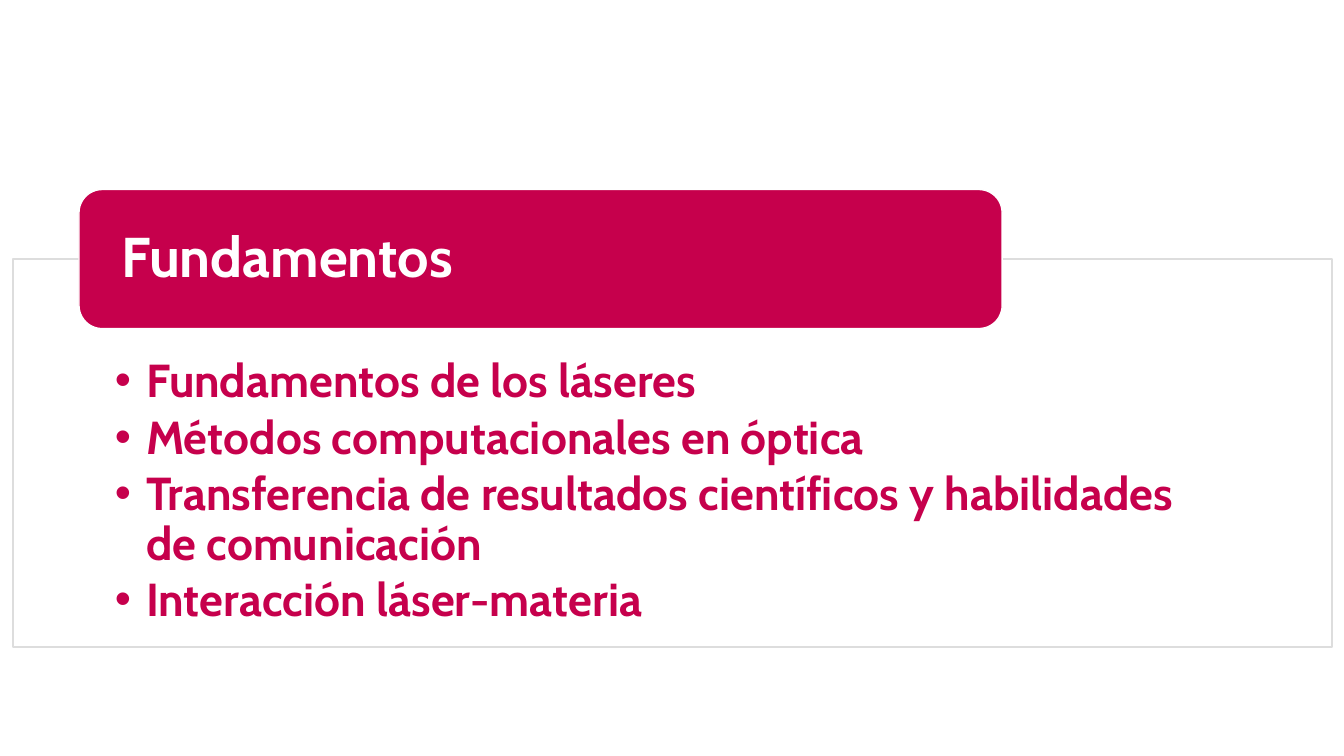
from lxml import etree
from pptx import Presentation
from pptx import util as u
from pptx.dml.color import RGBColor
from pptx.enum import shapes, text
from pptx.oxml.ns import qn

CRIMSON = RGBColor(0xC6, 0x00, 0x4C)
WHITE = RGBColor(0xFF, 0xFF, 0xFF)
GREY = RGBColor(0xDD, 0xDD, 0xDD)

WIDTH, HEIGHT = 13.33, 7.5
PANEL = (0.13, 2.57, 13.08, 3.85)
HEADING = "Fundamentos"
SUBJECTS = [
    "Fundamentos de los láseres",
    "Métodos computacionales en óptica",
    "Transferencia de resultados científicos y habilidades de comunicación",
    "Interacción láser-materia",
]


def apply(target, values):
    for name, value in values.items():
        setattr(target, name, value)


def place(box, area):
    names = ("left", "top", "width", "height")
    apply(box, {name: u.Inches(value) for name, value in zip(names, area)})


def draw_panel(page, kind, area, fill, line):
    panel = page.shapes.add_shape(kind, *(u.Inches(value) for value in area))
    panel.shadow.inherit = False
    panel.fill.solid()
    panel.fill.fore_color.rgb = fill
    panel.line.color.rgb = line
    panel.line.width = u.Pt(1)


def write(page, box, area, lines, margins, anchor, size, colour, after, hanging=0):
    """Fill a placeholder and bring it in front of its panel."""
    page.shapes._spTree.append(box._element)
    place(box, area)
    frame = box.text_frame
    left, top, right, bottom = (u.Inches(value) for value in margins)
    apply(frame, {
        "text": "\n".join(lines), "word_wrap": True,
        "auto_size": text.MSO_AUTO_SIZE.NONE, "vertical_anchor": anchor,
        "margin_left": left, "margin_top": top,
        "margin_right": right, "margin_bottom": bottom,
    })
    for para in frame.paragraphs:
        if hanging:
            properties = para._p.get_or_add_pPr()
            properties.set("marL", str(u.Inches(hanging)))
            properties.set("indent", str(-u.Inches(hanging)))
            etree.SubElement(properties, qn("a:buChar")).set("char", "•")
        apply(para, {
            "alignment": text.PP_ALIGN.LEFT, "line_spacing": 0.9,
            "space_before": u.Pt(0), "space_after": u.Pt(after),
        })
        for span in para.runs:
            apply(span.font, {"name": "Cabin", "size": u.Pt(size), "bold": True})
            span.font.color.rgb = colour


def subject_list(page, area):
    # Outlined panel with the bulleted subjects
    draw_panel(page, shapes.MSO_SHAPE.RECTANGLE, area, WHITE, GREY)
    write(page, page.placeholders[1], area, SUBJECTS, (1.01, 0.98, 1.01, 0.26),
          text.MSO_ANCHOR.TOP, 33, CRIMSON, 4.6, hanging=0.31)


def heading_tab(page, area):
    # Rounded tab centred on the top edge of the panel
    left, top, width, _ = area
    tab_height, inset = 1.38, 0.07
    tab = (left + width * 0.05, top - tab_height / 2, width * 0.7, tab_height)
    draw_panel(page, shapes.MSO_SHAPE.ROUNDED_RECTANGLE, tab, CRIMSON, WHITE)
    inner = (tab[0] + inset, tab[1] + inset, tab[2] - 2 * inset, tab[3] - 2 * inset)
    write(page, page.shapes.title, inner, [HEADING], (0.35, 0, 0.35, 0),
          text.MSO_ANCHOR.MIDDLE, 40, WHITE, 0)


def main():
    deck = Presentation()
    deck.slide_width, deck.slide_height = u.Inches(WIDTH), u.Inches(HEIGHT)
    page = deck.slides.add_slide(deck.slide_layouts[1])
    subject_list(page, PANEL)
    heading_tab(page, PANEL)
    deck.save("out.pptx")


if __name__ == "__main__":
    main()
